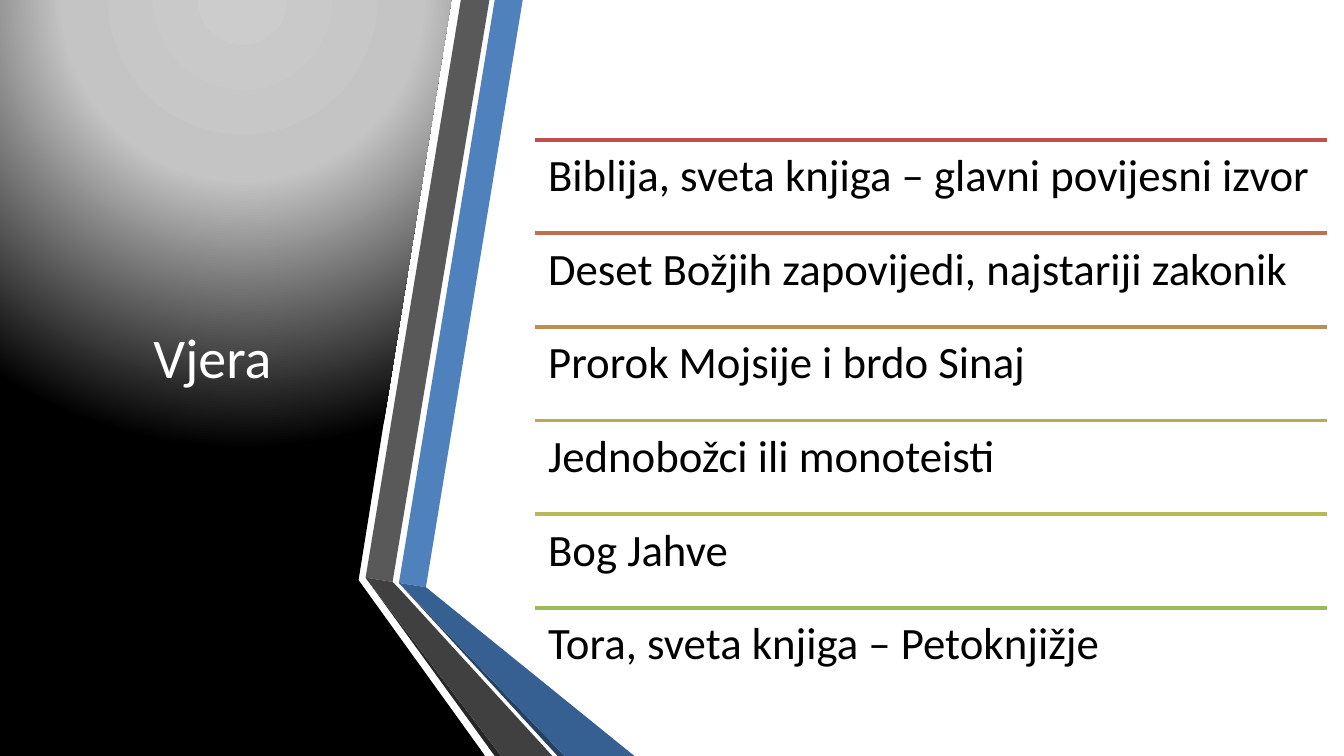
import pptx
import pptx.dml.color
import pptx.enum.shapes
import pptx.enum.text
import pptx.oxml
import pptx.oxml.ns
import pptx.util
from pptx.dml.color import RGBColor
from pptx.util import Cm

WHITE = RGBColor(0xFF, 0xFF, 0xFF)
BLACK = RGBColor(0x00, 0x00, 0x00)
BLUE = RGBColor(0x4F, 0x81, 0xBD)
DARK_BLUE = RGBColor(0x37, 0x60, 0x92)
NAVY = RGBColor(0x25, 0x40, 0x61)
GRAY = RGBColor(0x59, 0x59, 0x59)
DARK_GRAY = RGBColor(0x40, 0x40, 0x40)
CHARCOAL = RGBColor(0x26, 0x26, 0x26)
GLOW_STOPS = (
    (0, RGBColor(0xCC, 0xCC, 0xCC)),
    (40, RGBColor(0xC4, 0xC4, 0xC4)),
    (100, BLACK),
)

WIDTH = 25.4
HEIGHT = 14.29
LIST_LEFT = 10.11
LIST_TOP = 2.64
LIST_WIDTH = 14.96
ROW_HEIGHT = 1.77

BACKDROP = (
    (6.71, 0), (8.53, 0), (6.78, 10.95), (6.78, 10.97),
    (9.17, HEIGHT), (0, HEIGHT), (0, 0),
)
GRAY_BEND = (6.91, 10.92)
BLUE_BEND = (7.54, 11.02)
RIBBONS = (
    (BLUE, (BLUE_BEND, (8.05, 11.1), (9.88, 0), (9.35, 0))),
    (GRAY, ((9.25, 0), (8.71, 0), GRAY_BEND, (7.42, 11))),
    (CHARCOAL, (GRAY_BEND, (9.35, HEIGHT), (9.47, HEIGHT))),
    (NAVY, (BLUE_BEND, (10.54, HEIGHT), (10.67, HEIGHT))),
    (DARK_BLUE, (BLUE_BEND, (10.67, HEIGHT), (11.99, HEIGHT), (8.05, 11.1))),
    (DARK_GRAY, ((10.44, HEIGHT), (7.52, 11.1), (7.42, 11), GRAY_BEND, (9.47, HEIGHT))),
)
ROWS = (
    ("Biblija, sveta knjiga – glavni povijesni izvor", RGBColor(0xC0, 0x50, 0x4D)),
    ("Deset Božjih zapovijedi, najstariji zakonik", RGBColor(0xBF, 0x6F, 0x4F)),
    ("Prorok Mojsije i brdo Sinaj", RGBColor(0xBE, 0x8D, 0x52)),
    ("Jednobožci ili monoteisti", RGBColor(0xBD, 0xA9, 0x54)),
    ("Bog Jahve", RGBColor(0xB5, 0xBC, 0x57)),
    ("Tora, sveta knjiga – Petoknjižje", RGBColor(0x9B, 0xBB, 0x59)),
)


def write_text(frame, text, *, size, color, align, anchor, spacing=1.0):
    frame.word_wrap = True
    frame.auto_size = pptx.enum.text.MSO_AUTO_SIZE.NONE
    frame.vertical_anchor = anchor
    para = frame.paragraphs[0]
    para.alignment = align
    para.line_spacing = spacing
    span = para.add_run()
    span.text = text
    span.font.name = "Calibri"
    span.font.size = pptx.util.Pt(size)
    span.font.color.rgb = color


def add_polygon(page, points):
    corners = [(Cm(x), Cm(y)) for x, y in points]
    builder = page.shapes.build_freeform(*corners[0])
    builder.add_line_segments(corners[1:], close=True)
    shape = builder.convert_to_shape()
    shape.shadow.inherit = False
    shape.line.fill.background()
    return shape


def add_backdrop(page):
    shape = add_polygon(page, BACKDROP)
    stops = "".join(
        f'<a:gs pos="{position * 1000}"><a:srgbClr val="{color}"/></a:gs>'
        for position, color in GLOW_STOPS
    )
    gradient = pptx.oxml.parse_xml(
        f'<a:gradFill {pptx.oxml.ns.nsdecls("a")} rotWithShape="1">'
        f'<a:gsLst>{stops}</a:gsLst><a:path path="circle">'
        '<a:fillToRect l="50000" t="-80000" r="50000" b="180000"/>'
        '</a:path></a:gradFill>'
    )
    shape.element.spPr.find(pptx.oxml.ns.qn("a:custGeom")).addnext(gradient)


def add_ribbon(page, color, points):
    shape = add_polygon(page, points)
    shape.fill.solid()
    shape.fill.fore_color.rgb = color


def add_rule(page, top, color):
    rule = page.shapes.add_connector(
        pptx.enum.shapes.MSO_CONNECTOR.STRAIGHT,
        Cm(LIST_LEFT), Cm(top), Cm(LIST_LEFT + LIST_WIDTH), Cm(top),
    )
    rule.line.color.rgb = color
    rule.line.width = pptx.util.Pt(2)
    rule.element.spPr.append(
        pptx.oxml.parse_xml(f'<a:effectLst {pptx.oxml.ns.nsdecls("a")}/>')
    )


def add_row(page, top, text, color):
    add_rule(page, top, color)
    box = page.shapes.add_textbox(Cm(LIST_LEFT), Cm(top), Cm(LIST_WIDTH), Cm(ROW_HEIGHT))
    frame = box.text_frame
    frame.margin_left = frame.margin_right = Cm(0.25)
    frame.margin_top = frame.margin_bottom = Cm(0.25)
    write_text(
        frame, text, size=24, color=BLACK, spacing=0.9,
        align=pptx.enum.text.PP_ALIGN.LEFT, anchor=pptx.enum.text.MSO_ANCHOR.TOP,
    )


def place_title(page, text):
    title = page.shapes.title
    title.left, title.top = Cm(1.12), Cm(1.42)
    title.width, title.height = Cm(5.79), Cm(10.64)
    write_text(
        title.text_frame, text, size=30, color=WHITE,
        align=pptx.enum.text.PP_ALIGN.CENTER, anchor=pptx.enum.text.MSO_ANCHOR.MIDDLE,
    )
    page.shapes.element.append(title.element)


def main():
    deck = pptx.Presentation()
    deck.slide_width, deck.slide_height = Cm(WIDTH), Cm(HEIGHT)
    page = deck.slides.add_slide(deck.slide_layouts[5])
    add_backdrop(page)
    for color, points in RIBBONS:
        add_ribbon(page, color, points)
    place_title(page, "Vjera")
    for index, (text, color) in enumerate(ROWS):
        add_row(page, LIST_TOP + index * ROW_HEIGHT, text, color)
    deck.save("out.pptx")


if __name__ == "__main__":
    main()
